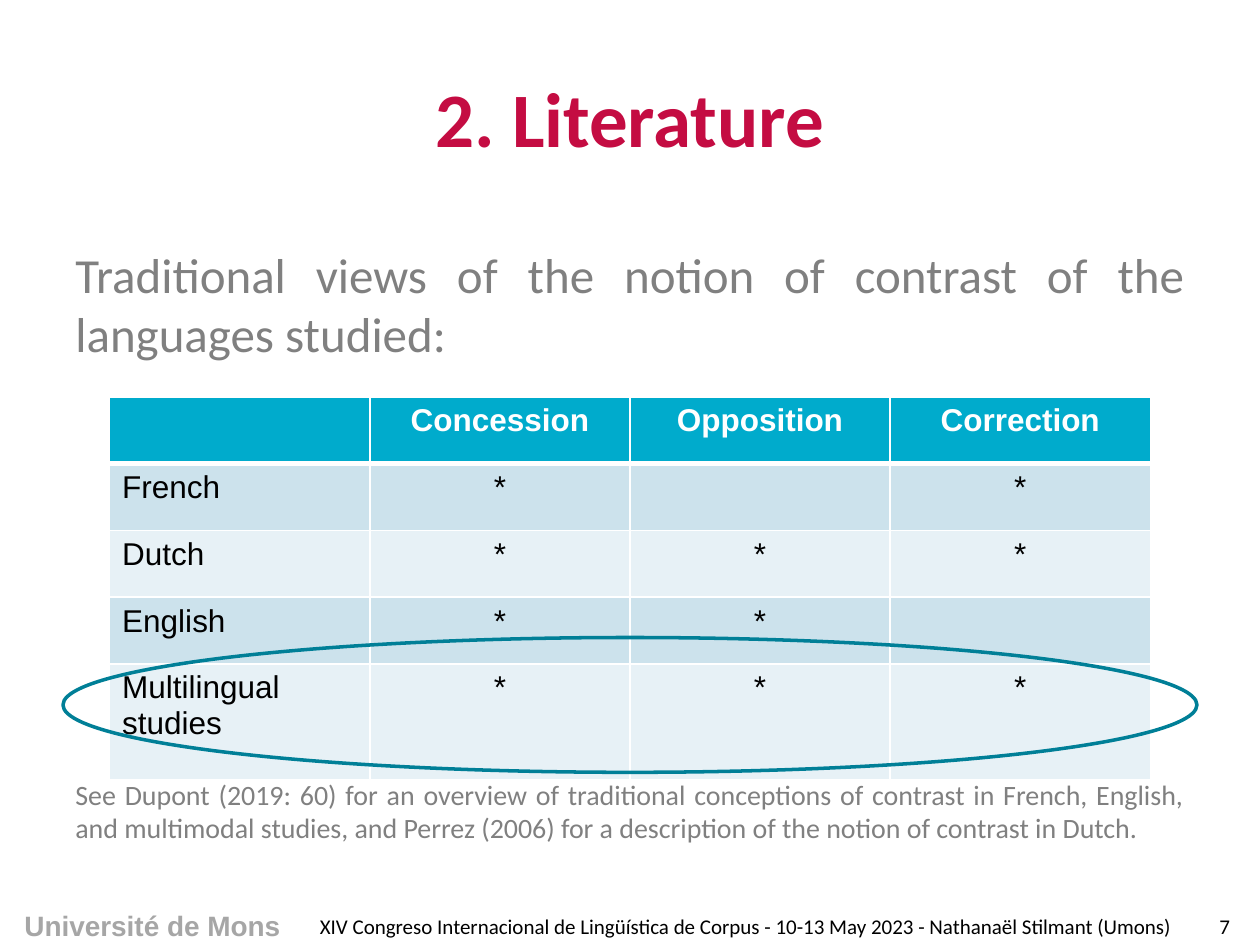
from lxml import etree
from pptx import Presentation
from pptx.dml.color import RGBColor
from pptx.enum import shapes, text
from pptx.oxml import ns
from pptx.util import Inches, Pt

COLORS = {
    "title": "C40C42", "body": "808080", "brand": "A6A6A6", "black": "000000",
    "white": "FFFFFF", "header": "00ABCC", "dark_band": "CCE2EC",
    "light_band": "E7F1F6", "ring": "007F97",
}
LEFT, CENTER, JUSTIFY = (text.PP_ALIGN.LEFT, text.PP_ALIGN.CENTER,
                         text.PP_ALIGN.JUSTIFY)
TOP, MIDDLE = text.MSO_ANCHOR.TOP, text.MSO_ANCHOR.MIDDLE

# words, (left, top, width, height), size, font, colour, bold, alignment, anchor
TEXTS = [
    ("Université de Mons", (-0.01, 7.16, 2.44, 0.37),
     16, "Arial", "brand", True, CENTER, TOP),
    ("2. Literature", (0.5, 0.3, 9, 1.25),
     44, "Calibri", "title", True, CENTER, MIDDLE),
    ("Traditional views of the notion of contrast of the languages studied:",
     (0.5, 1.89, 9, 1.05), 28, "Calibri", "body", False, JUSTIFY, TOP),
    ("See Dupont (2019: 60) for an overview of traditional conceptions of "
     "contrast in French, English, and multimodal studies, and Perrez (2006) "
     "for a description of the notion of contrast in Dutch.",
     (0.5, 6.12, 9, 0.65), 16, "Calibri", "body", False, JUSTIFY, TOP),
    ("XIV Congreso Internacional de Lingüística de Corpus - 10-13 May 2023 - "
     "Nathanaël Stilmant (Umons)",
     (2.44, 7.2, 7, 0.3), 12, "Calibri", "black", False, LEFT, MIDDLE),
    ("7", (9.44, 7.2, 0.56, 0.3),
     12, "Calibri", "black", False, CENTER, MIDDLE),
]

NOTIONS = [
    ("", "Concession", "Opposition", "Correction"),
    ("French", "*", "", "*"),
    ("Dutch", "*", "*", "*"),
    ("English", "*", "*", ""),
    ("Multilingual studies", "*", "*", "*"),
]
TABLE_AREA = (0.87, 3.15, 8.26, 3.03)
ROW_HEIGHTS = (0.53, 0.53, 0.53, 0.53, 0.92)
RING_AREA = (0.5, 5.06, 9, 1.07)


def rgb(name):
    return RGBColor.from_string(COLORS[name])


def write(frame, words, size, font, color, bold, align):
    para = frame.paragraphs[0]
    para.alignment = align
    para.font.size = Pt(size)
    if words:
        span = para.add_run()
        span.text = words
        span.font.size = Pt(size)
        span.font.name = font
        span.font.bold = bold
        span.font.color.rgb = rgb(color)


def add_text(page, words, area, size, font, color, bold, align, anchor):
    frame = page.shapes.add_textbox(*map(Inches, area)).text_frame
    frame.word_wrap = True
    frame.vertical_anchor = anchor
    write(frame, words, size, font, color, bold, align)


def set_borders(cell, widths):
    """Draw white borders; widths maps a side (L, R, T, B) to points."""
    props = cell._tc.get_or_add_tcPr()
    for place, (side, width) in enumerate(widths.items()):
        line = etree.Element(ns.qn(f"a:ln{side}"), w=str(Pt(width)))
        fill = etree.SubElement(line, ns.qn("a:solidFill"))
        etree.SubElement(fill, ns.qn("a:srgbClr"), val=COLORS["white"])
        props.insert(place, line)


def add_notions(page):
    table = page.shapes.add_table(
        len(NOTIONS), len(NOTIONS[0]), *map(Inches, TABLE_AREA)).table
    for column in table.columns:
        column.width = Inches(TABLE_AREA[2] / len(NOTIONS[0]))
    for r, (height, words_row) in enumerate(zip(ROW_HEIGHTS, NOTIONS)):
        table.rows[r].height = Inches(height)
        header = r == 0
        band = "header" if header else "dark_band" if r % 2 else "light_band"
        for c, words in enumerate(words_row):
            cell = table.cell(r, c)
            cell.fill.solid()
            cell.fill.fore_color.rgb = rgb(band)
            write(cell.text_frame, words, 18, "Arial",
                  "white" if header else "black", header, CENTER if c else LEFT)
            set_borders(cell, {"L": 1, "R": 1, "T": 3 if r == 1 else 1,
                               "B": 3 if header else 1})


def add_ring(page):
    ring = page.shapes.add_shape(shapes.MSO_SHAPE.OVAL, *map(Inches, RING_AREA))
    ring.shadow.inherit = False
    ring.fill.background()
    ring.line.color.rgb = rgb("ring")
    ring.line.width = Pt(2)


def main():
    deck = Presentation()
    deck.slide_width, deck.slide_height = Inches(10), Inches(7.5)
    page = deck.slides.add_slide(deck.slide_layouts[6])
    for item in TEXTS:
        add_text(page, *item)
    add_notions(page)
    add_ring(page)
    deck.save("out.pptx")


if __name__ == "__main__":
    main()
